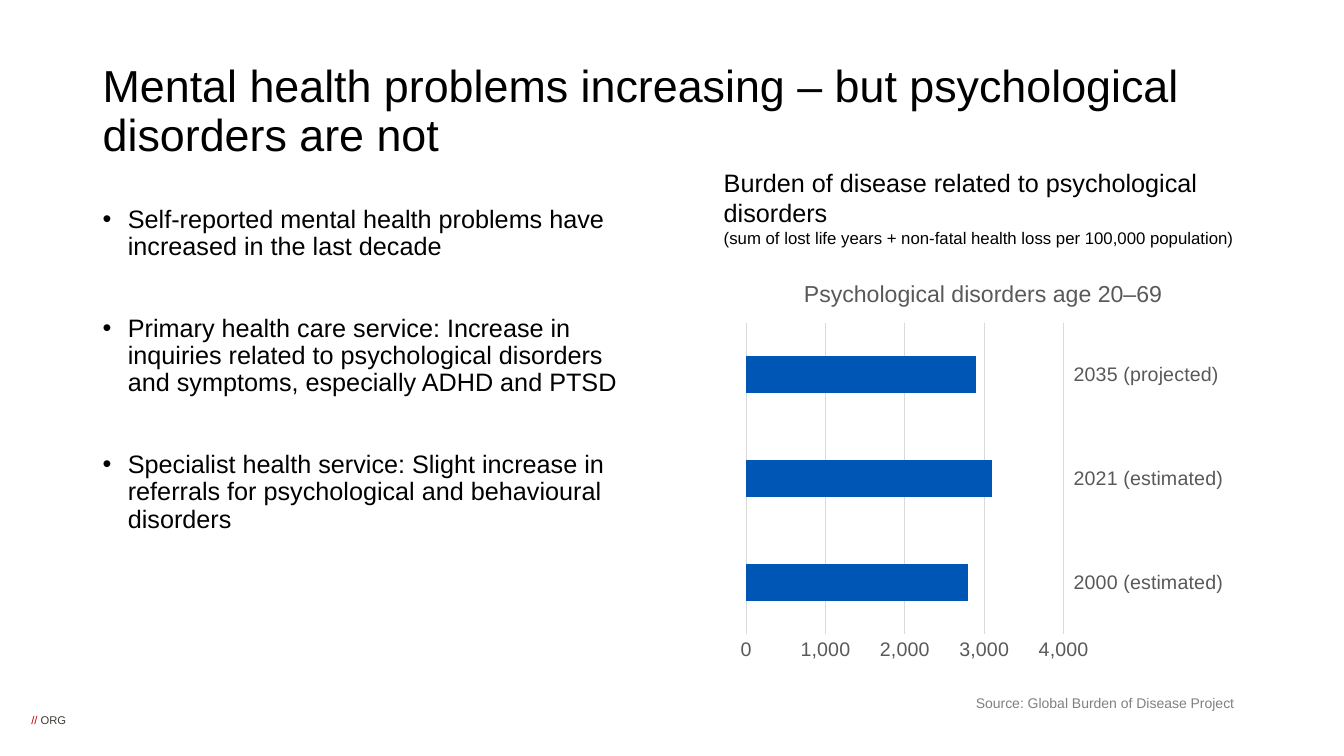
from lxml.etree import SubElement
from pptx import Presentation
from pptx.chart.data import CategoryChartData
from pptx.dml.color import RGBColor
from pptx.enum.chart import XL_CHART_TYPE, XL_TICK_LABEL_POSITION, XL_TICK_MARK
from pptx.enum.text import MSO_ANCHOR
from pptx.oxml import parse_xml
from pptx.oxml.ns import nsdecls, qn
from pptx.util import Inches, Pt

FONT = "Arial"
BLACK, GRAY, GRID = "000000", "595959", "D9D9D9"


def style_font(font, size, color):
    font.name = FONT
    font.size = Pt(size)
    font.bold = False
    font.color.rgb = RGBColor.from_string(color)


def add_text(box, paragraphs):
    """Add a text box; each paragraph is a list of (text, size, color) runs."""
    shape = slide.shapes.add_textbox(*[Inches(length) for length in box])
    frame = shape.text_frame
    frame.word_wrap = True
    for index, runs in enumerate(paragraphs):
        paragraph = frame.add_paragraph() if index else frame.paragraphs[0]
        for text, size, color in runs:
            run = paragraph.add_run()
            run.text = text
            style_font(run.font, size, color)
    return frame


presentation = Presentation()
presentation.slide_width = Inches(13.33)
presentation.slide_height = Inches(7.5)
slide = presentation.slides.add_slide(presentation.slide_layouts[6])

# Footer
footer = add_text((0.27, 7.08, 2.51, 0.13), [[("// ", 8, "C30000"), ("ORG", 8, "3E3832")]])
footer.margin_left = Inches(0.04)
footer.margin_top = footer.margin_right = footer.margin_bottom = 0

# Title
title = add_text(
    (0.92, 0.53, 11.5, 1.17),
    [[("Mental health problems increasing – but psychological disorders are not", 32, BLACK)]],
)
title.vertical_anchor = MSO_ANCHOR.MIDDLE
title.paragraphs[0].line_spacing = 0.9

# Findings
findings = [
    "Self-reported mental health problems have increased in the last decade",
    "Primary health care service: Increase in inquiries related to psychological disorders "
    "and symptoms, especially ADHD and PTSD",
    "Specialist health service: Slight increase in referrals for psychological and "
    "behavioural disorders",
]
body = add_text((0.92, 2, 5.47, 4.76), [[(finding, 18, BLACK)] for finding in findings])
for index, paragraph in enumerate(body.paragraphs):
    paragraph.line_spacing = 0.9
    if index:
        paragraph.space_before = Pt(39)
    properties = paragraph._p.get_or_add_pPr()
    properties.set("marL", str(Inches(0.25)))
    properties.set("indent", str(-Inches(0.25)))
    SubElement(properties, qn("a:buFont"), typeface=FONT)
    SubElement(properties, qn("a:buChar"), char="•")

# Source and chart heading
add_text((9.58, 6.84, 3.1, 0.27), [[("Source: Global Burden of Disease Project", 10, "808080")]])
add_text(
    (7.08, 1.61, 5.33, 0.91),
    [
        [("Burden of disease related to psychological disorders", 18, BLACK)],
        [("(sum of lost life years + non-fatal health loss per 100,000 population)", 12, BLACK)],
    ],
)

# Chart
burden = CategoryChartData(number_format="#,##0")
burden.categories = ["2000 (estimated)", "2021 (estimated)", "2035 (projected)"]
burden.add_series("Series 1", [2800, 3100, 2900])
chart = slide.shapes.add_chart(
    XL_CHART_TYPE.BAR_CLUSTERED, Inches(7.25), Inches(2.59), Inches(5), Inches(4.07), burden
).chart
style_font(chart.font, 14, BLACK)
chart.has_legend = False
chart.has_title = True
chart_title = chart.chart_title.text_frame.paragraphs[0].add_run()
chart_title.text = "Psychological disorders age 20–69"
style_font(chart_title.font, 16.5, GRAY)

plot = chart.plots[0]
plot.gap_width = 182
plot.vary_by_categories = False
bar_fill = plot.series[0].format.fill
bar_fill.solid()
bar_fill.fore_color.rgb = RGBColor.from_string("0056B4")

category_axis, value_axis = chart.category_axis, chart.value_axis
for axis in (category_axis, value_axis):
    axis.major_tick_mark = axis.minor_tick_mark = XL_TICK_MARK.NONE
    style_font(axis.tick_labels.font, 14, GRAY)
category_axis.tick_label_position = XL_TICK_LABEL_POSITION.HIGH
value_axis.minimum_scale = 0
value_axis.maximum_scale = 4000
value_axis.major_unit = 1000
value_axis.tick_labels.number_format = "#,##0"
value_axis.tick_labels.number_format_is_linked = False
value_axis.format.line.fill.background()
for line in (category_axis.format.line, value_axis.major_gridlines.format.line):
    line.color.rgb = RGBColor.from_string(GRID)
    line.width = Pt(0.75)

# Plot area inside the chart frame, as fractions of its size
plot_area = chart._chartSpace.chart.plotArea
for old_layout in plot_area.findall(qn("c:layout")):
    plot_area.remove(old_layout)
plot_area.insert(0, parse_xml(
    f'<c:layout {nsdecls("c")}><c:manualLayout><c:layoutTarget val="inner"/>'
    '<c:xMode val="edge"/><c:yMode val="edge"/>'
    '<c:x val="0.03"/><c:y val="0.15"/><c:w val="0.63"/><c:h val="0.76"/>'
    "</c:manualLayout></c:layout>"
))

presentation.save("out.pptx")
